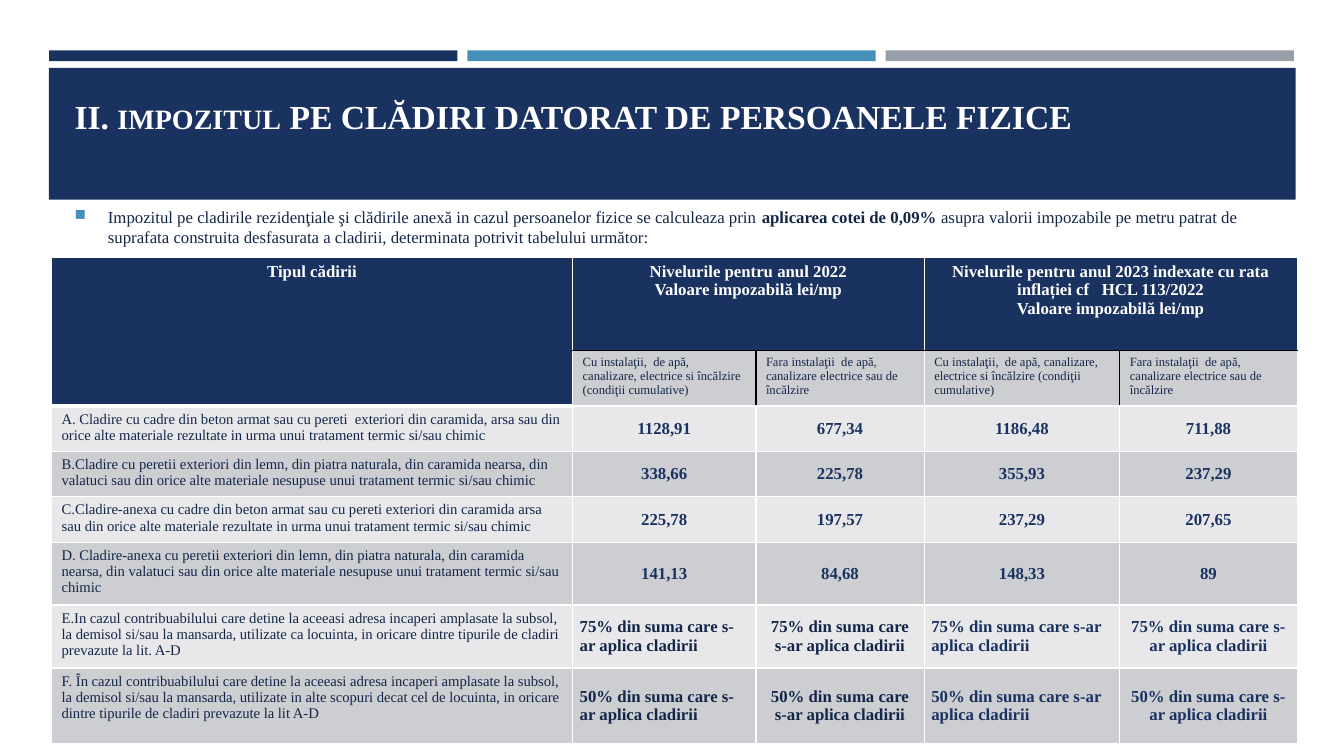
from lxml import etree
from pptx import Presentation
from pptx import util as u
from pptx.dml.color import RGBColor
from pptx.enum import shapes, text
from pptx.oxml.ns import qn

NAVY, INK, BLUE, GREY = "1A3260", "142648", "4590B8", "969FA7"
WHITE, BLACK, LIGHT, DARK = "FFFFFF", "000000", "E8E8EA", "CDCED2"


def paint(fill, colour):
    fill.solid()
    fill.fore_color.rgb = RGBColor.from_string(colour)


def write(paragraph, words, size, colour, bold=False):
    run = paragraph.add_run()
    run.text = words
    run.font.name = "Times New Roman"
    run.font.size = u.Pt(size)
    run.font.bold = bold
    paint(run.font.fill, colour)


deck = Presentation()
deck.slide_width, deck.slide_height = u.Cm(33.87), u.Cm(19.05)
slide = deck.slides.add_slide(deck.slide_layouts[6])

bands = [(1.24 + 10.54 * i, 1.27, 10.29, 0.27, colour)
         for i, colour in enumerate([NAVY, BLUE, GREY])]
bands.append((1.23, 1.71, 31.42, 3.32, NAVY))
for left, top, width, height, colour in bands:
    band = slide.shapes.add_shape(shapes.MSO_SHAPE.RECTANGLE, u.Cm(left), u.Cm(top),
                                  u.Cm(width), u.Cm(height))
    band.shadow.inherit = False
    band.line.fill.background()
    paint(band.fill, colour)

title = slide.shapes.add_textbox(u.Cm(1.63), u.Cm(1.96), u.Cm(30.63), u.Cm(1.6)).text_frame
title.word_wrap = True
title.vertical_anchor = text.MSO_ANCHOR.BOTTOM
for words, size in [("II. ", 24), ("IMPOZITUL", 20),
                    (" PE CLĂDIRI DATORAT DE PERSOANELE FIZICE", 24)]:
    write(title.paragraphs[0], words, size, WHITE, True)

intro = slide.shapes.add_textbox(u.Cm(1.63), u.Cm(5.08), u.Cm(31.29), u.Cm(1.3)).text_frame
intro.word_wrap = True
rule = intro.paragraphs[0]
for words, bold in [
    ("Impozitul pe cladirile rezidenţiale şi clădirile anexă in cazul persoanelor fizice "
     "se calculeaza prin ", False),
    ("aplicarea cotei de 0,09% ", True),
    ("asupra valorii impozabile pe metru patrat de suprafata construita desfasurata a "
     "cladirii, determinata potrivit tabelului următor:", False),
]:
    write(rule, words, 12, INK, bold)
rule.space_after = u.Pt(6)
indent = rule._p.get_or_add_pPr()
indent.set("marL", str(u.Cm(0.84)))
indent.set("indent", str(-u.Cm(0.84)))
bullet_colour = etree.SubElement(indent, qn("a:buClr"))
etree.SubElement(bullet_colour, qn("a:srgbClr"), val=BLUE)
etree.SubElement(indent, qn("a:buSzPct"), val="92000")
etree.SubElement(indent, qn("a:buChar"), char="■")

with_utilities = ("Cu instalaţii,  de apă, canalizare, electrice si încălzire "
                  "(condiţii cumulative)")
without_utilities = "Fara instalaţii  de apă, canalizare electrice sau de încălzire"
level = "Valoare impozabilă lei/mp"
share = "{}% din suma care s-ar aplica cladirii"
rows = [
    ["Tipul cădirii", "Nivelurile pentru anul 2022\n" + level, "",
     "Nivelurile pentru anul 2023 indexate cu rata inflației cf   HCL 113/2022\n" + level, ""],
    ["", with_utilities, without_utilities, with_utilities, without_utilities],
    ["A. Cladire cu cadre din beton armat sau cu pereti  exteriori din caramida, arsa sau din "
     "orice alte materiale rezultate in urma unui tratament termic si/sau chimic",
     "1128,91", "677,34", "1186,48", "711,88"],
    ["B.Cladire cu peretii exteriori din lemn, din piatra naturala, din caramida nearsa, din "
     "valatuci sau din orice alte materiale nesupuse unui tratament termic si/sau chimic",
     "338,66", "225,78", "355,93", "237,29"],
    ["C.Cladire-anexa cu cadre din beton armat sau cu pereti exteriori din caramida arsa sau "
     "din orice alte materiale rezultate in urma unui tratament termic si/sau chimic",
     "225,78", "197,57", "237,29", "207,65"],
    ["D. Cladire-anexa cu peretii exteriori din lemn, din piatra naturala, din caramida nearsa, "
     "din valatuci sau din orice alte materiale nesupuse unui tratament termic si/sau chimic",
     "141,13", "84,68", "148,33", "89"],
    ["E.In cazul contribuabilului care detine la aceeasi adresa incaperi amplasate la subsol, "
     "la demisol si/sau la mansarda, utilizate ca locuinta, in oricare dintre tipurile de "
     "cladiri prevazute la lit. A-D"] + [share.format(75)] * 4,
    ["F. În cazul contribuabilului care detine la aceeasi adresa incaperi amplasate la subsol, "
     "la demisol si/sau la mansarda, utilizate in alte scopuri decat cel de locuinta, in "
     "oricare dintre tipurile de cladiri prevazute la lit A-D"] + [share.format(50)] * 4,
]
widths = [13.13, 4.62, 4.24, 4.93, 4.47]
heights = [2.35, 1.31, 1.09, 1.09, 1.09, 1.5, 1.5, 1.91]
taxes = slide.shapes.add_table(len(rows), len(widths), u.Cm(1.3), u.Cm(6.48),
                               u.Cm(sum(widths)), u.Cm(sum(heights))).table
taxes.first_row = taxes.horz_banding = False
for column, width in zip(taxes.columns, widths):
    column.width = u.Cm(width)
for row, height in zip(taxes.rows, heights):
    row.height = u.Cm(height)
taxes.cell(0, 0).merge(taxes.cell(1, 0))
for c in (1, 3):
    taxes.cell(0, c).merge(taxes.cell(0, c + 1))

for r, row in enumerate(rows):
    for c, words in enumerate(row):
        cell = taxes.cell(r, c)
        heading = r == 0 or (r == 1 and c == 0)
        subheading = r == 1 and c > 0
        amount = r > 1 and c > 0
        is_share = amount and r > 5
        paint(cell.fill, NAVY if heading else DARK if r % 2 else LIGHT)
        if heading:
            size, colour = 12, WHITE
        elif amount:
            size, colour = 12, INK if is_share and c < 3 else NAVY
            cell.vertical_anchor = text.MSO_ANCHOR.MIDDLE
            cell.margin_left = cell.margin_right = u.Cm(0.18)
            cell.margin_top = cell.margin_bottom = 0
        else:
            size, colour = 9 if subheading else 10.5, INK
        centred = heading or (amount and not (is_share and c % 2))
        for i, line in enumerate(words.split("\n") if words else []):
            frame = cell.text_frame
            paragraph = frame.add_paragraph() if i else frame.paragraphs[0]
            paragraph.alignment = text.PP_ALIGN.CENTER if centred else text.PP_ALIGN.LEFT
            write(paragraph, line, size, colour, heading or amount)

        black_sides = set()
        if r == 0 and c > 0:
            black_sides = {"B"}
        elif subheading:
            black_sides = {"T", "R" if c % 2 else "L"}
        for i, side in enumerate("LRTB"):
            weight = 3 if heading and c == 0 and side == "B" else 1
            border = etree.Element(qn("a:ln" + side), w=str(u.Pt(weight)))
            ink = etree.SubElement(border, qn("a:solidFill"))
            etree.SubElement(ink, qn("a:srgbClr"), val=BLACK if side in black_sides else WHITE)
            cell._tc.get_or_add_tcPr().insert(i, border)

deck.save("out.pptx")
